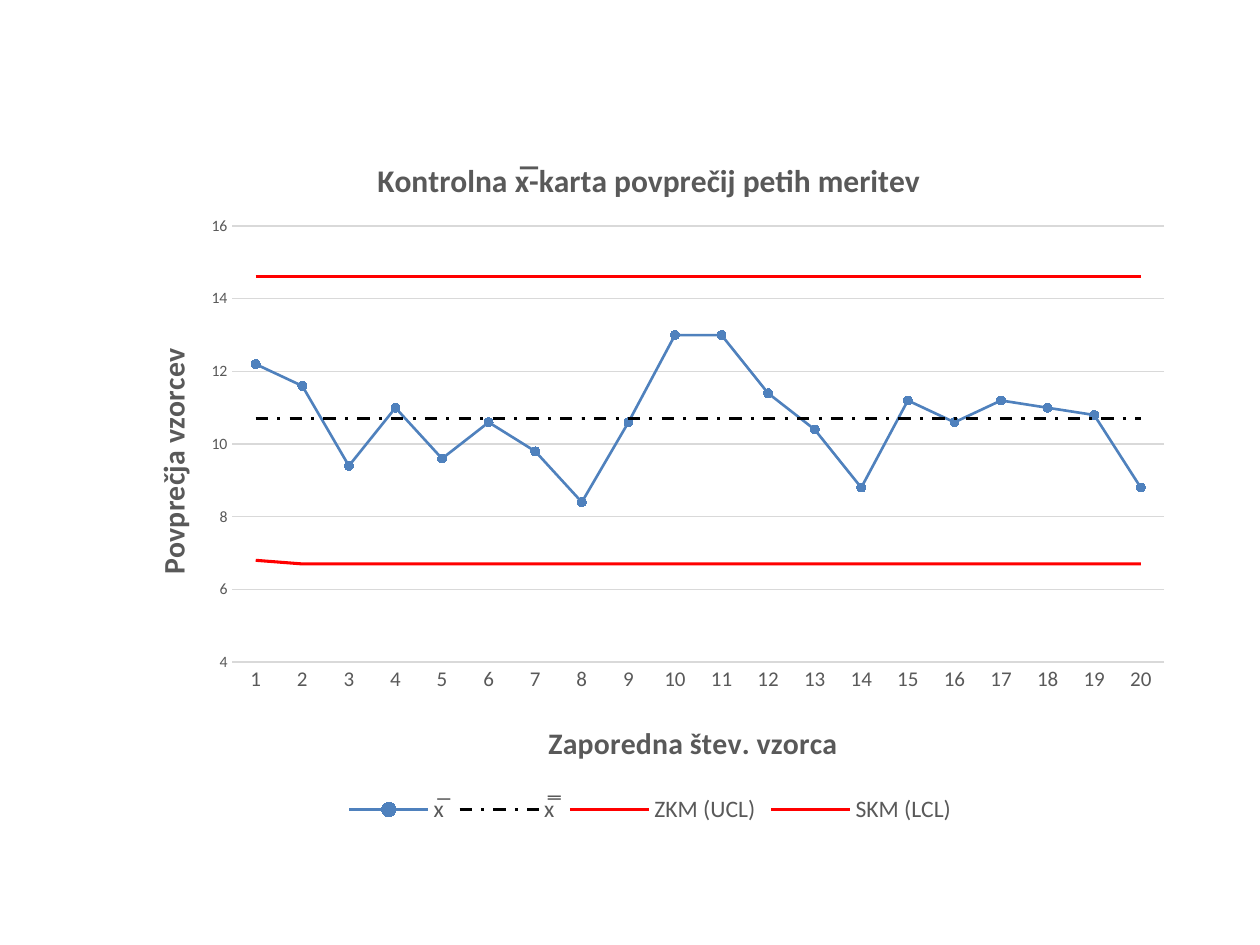
import lxml.etree
import pptx
import pptx.chart.data
import pptx.dml.color
import pptx.enum.chart
import pptx.enum.dml
import pptx.oxml.ns
import pptx.util
from pptx.util import Inches

qn = pptx.oxml.ns.qn
MARK = pptx.enum.chart.XL_MARKER_STYLE
TICK = pptx.enum.chart.XL_TICK_MARK

MEANS = [12.2, 11.6, 9.4, 11, 9.6, 10.6, 9.8, 8.4, 10.6, 13,
         13, 11.4, 10.4, 8.8, 11.2, 10.6, 11.2, 11, 10.8, 8.8]
COUNT = len(MEANS)
# Name, values, colour, line width, dashed, marked
SERIES = [
    ("x̅", MEANS, "4F81BD", 1.5, False, True),
    ("x̿", [10.7] * COUNT, "000000", 1.75, True, False),
    ("ZKM (UCL)", [14.6] * COUNT, "FF0000", 1.75, False, False),
    ("SKM (LCL)", [6.8] + [6.7] * (COUNT - 1), "FF0000", 1.75, False, False),
]


def color(hex_text):
    return pptx.dml.color.RGBColor.from_string(hex_text)


def set_font(font, size, ink, bold=False, name="Calibri"):
    font.name = name
    font.size = pptx.util.Pt(size)
    font.bold = bold
    font.color.rgb = color(ink)


def write(frame, text, **style):
    """Put one formatted line of text into a text frame."""
    para = frame.paragraphs[0]
    span = para.add_run()
    span.text = text
    set_font(span.font, **style)


def set_line(line, ink, width):
    line.color.rgb = color(ink)
    line.width = pptx.util.Pt(width)


def place(parent, index, inner=False, **fractions):
    """Fix a chart part at fractions of the chart's size."""
    for old in parent.findall(qn("c:layout")):
        parent.remove(old)
    layout = lxml.etree.Element(qn("c:layout"))
    manual = lxml.etree.SubElement(layout, qn("c:manualLayout"))
    values = {"layoutTarget": "inner"} if inner else {}
    values.update(xMode="edge", yMode="edge", **fractions)
    for tag, value in values.items():
        lxml.etree.SubElement(manual, qn(f"c:{tag}")).set("val", str(value))
    parent.insert(index, layout)


class ControlChart:
    ink = "595959"
    rule = "D9D9D9"

    def __init__(self, slide):
        self.slide = slide

    def add_chart(self, left, top, width, height):
        data = pptx.chart.data.CategoryChartData()
        data.categories = [str(number) for number in range(1, COUNT + 1)]
        for name, values, *_ in SERIES:
            data.add_series(name, values)
        kind = pptx.enum.chart.XL_CHART_TYPE.LINE_MARKERS
        frame = self.slide.shapes.add_chart(
            kind, Inches(left), Inches(top), Inches(width), Inches(height), data)
        self.chart = frame.chart
        set_font(self.chart.font, 10, "000000")
        self.chart.plots[0].vary_by_categories = False
        area = self.chart.element.find(".//" + qn("c:plotArea"))
        place(area, 0, inner=True, x=0.11, y=0.144, w=0.87, h=0.619)

    def add_title(self, owner, text, size, x, y):
        title = owner.chart_title if owner is self.chart else owner.axis_title
        write(title.text_frame, text, size=size, ink=self.ink, bold=True)
        place(title.element, 1, x=x, y=y)

    def style_axis(self, axis, size):
        axis.major_tick_mark = axis.minor_tick_mark = TICK.NONE
        set_font(axis.tick_labels.font, size, self.ink)

    def style_axes(self):
        across, upright = self.chart.category_axis, self.chart.value_axis
        self.style_axis(across, 12)
        set_line(across.format.line, self.rule, 0.75)
        self.style_axis(upright, 9)
        upright.format.line.fill.background()
        upright.minimum_scale, upright.maximum_scale = 4, 16
        upright.major_unit = 2
        set_line(upright.major_gridlines.format.line, self.rule, 0.75)

    def style_series(self):
        for series, row in zip(self.chart.plots[0].series, SERIES):
            _, _, ink, width, dashed, marked = row
            series.smooth = False
            set_line(series.format.line, ink, width)
            if dashed:
                series.format.line.dash_style = pptx.enum.dml.MSO_LINE.DASH_DOT
            series.marker.style = MARK.CIRCLE if marked else MARK.NONE
            if marked:
                series.marker.size = 5
                series.marker.format.fill.solid()
                series.marker.format.fill.fore_color.rgb = color(ink)
                set_line(series.marker.format.line, ink, 0.75)

    def add_legend(self):
        self.chart.has_legend = True
        legend = self.chart.legend
        legend.position = pptx.enum.chart.XL_LEGEND_POSITION.BOTTOM
        legend.include_in_layout = False
        set_font(legend.font, 13.5, self.ink)


def main():
    deck = pptx.Presentation()
    deck.slide_width, deck.slide_height = Inches(10), Inches(7.5)
    page = ControlChart(deck.slides.add_slide(deck.slide_layouts[6]))

    # Chart with its lines and axes
    page.add_chart(0.91, 0.99, 8.5, 5.59)
    page.style_series()
    page.style_axes()

    # Titles and legend
    chart = page.chart
    page.add_title(chart, "Kontrolna x̅-karta povprečij petih meritev", 18, 0.24, 0.04)
    page.add_title(chart.category_axis, "Zaporedna štev. vzorca", 17, 0.4, 0.84)
    page.add_title(chart.value_axis, "Povprečja vzorcev", 17, 0.03, 0.31)
    page.add_legend()

    deck.save("out.pptx")


if __name__ == "__main__":
    main()
